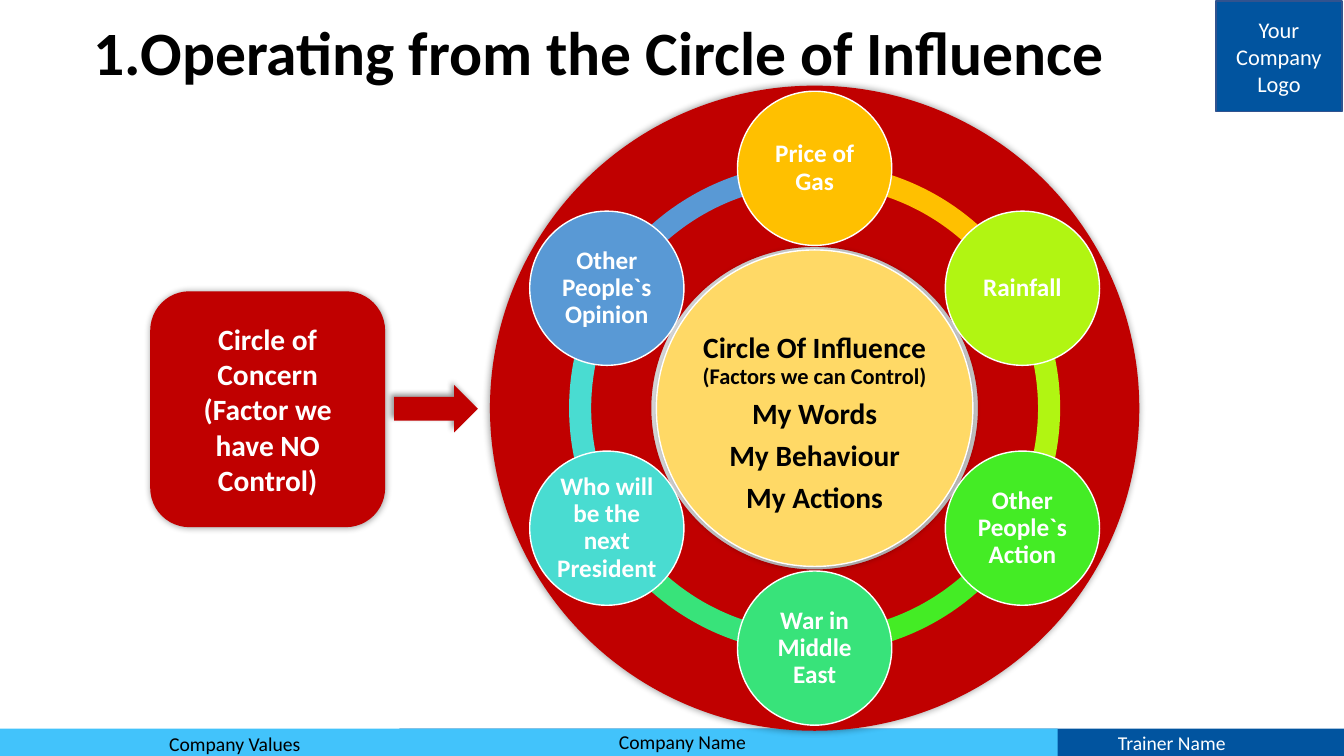
"""Build the Circle of Influence slide."""
from math import cos, radians, sin

from lxml.etree import SubElement
from pptx import Presentation
from pptx.dml.color import RGBColor
from pptx.enum.shapes import MSO_SHAPE as Kind
from pptx.enum.text import MSO_ANCHOR as Anchor, PP_ALIGN as Align
from pptx.oxml.ns import qn
from pptx.util import Pt

PX = 9144
THEME = {
    "font": "Calibri",
    "black": "000000", "white": "FFFFFF",
    "navy": "01549F", "navy_edge": "31538F", "sky": "42C3FB",
    "concern": "C00000", "influence": "FFD966",
    "ring": ["FFC000", "B1F512", "44EC25", "38E37A", "49DCD1", "5999D5"],
    "title": 44, "heading": 21, "factor": 18, "note": 16, "footer": 14,
}


def add_block(kind, box, fill, edge=None, shadow=None, adjust=()):
    """Add a preset shape; shadow is (blur, distance, direction)."""
    shape = slide.shapes.add_shape(kind, *[round(value * PX) for value in box])
    shape.shadow.inherit = False
    shape.fill.solid()
    shape.fill.fore_color.rgb = RGBColor.from_string(fill)
    if edge:
        shape.line.color.rgb = RGBColor.from_string(edge)
        shape.line.width = Pt(1)
    else:
        shape.line.fill.background()
    for index, value in enumerate(adjust):
        shape.adjustments[index] = value
    if shadow:
        blur, distance, direction = shadow
        effects = shape._element.spPr.find(qn("a:effectLst"))
        outer = SubElement(effects, qn("a:outerShdw"), blurRad=str(Pt(blur)), dist=str(Pt(distance)),
                           dir=str(direction * 60000), algn="ctr", rotWithShape="0")
        color = SubElement(outer, qn("a:srgbClr"), val=THEME["black"])
        SubElement(color, qn("a:alpha"), val="40000")
    return shape


def write_text(shape, paragraphs, color, bold=False, align=Align.CENTER, anchor=Anchor.MIDDLE,
               insets=(10, 5, 10, 5), spacing=1.0, before=0):
    """Fill a shape with paragraphs, each a list of (text, size) runs."""
    frame = shape.text_frame
    left, top, right, bottom = [value * PX for value in insets]
    layout = {"word_wrap": True, "vertical_anchor": anchor, "margin_left": left,
              "margin_top": top, "margin_right": right, "margin_bottom": bottom}
    for name, value in layout.items():
        setattr(frame, name, value)
    for index, runs in enumerate(paragraphs):
        paragraph = frame.add_paragraph() if index else frame.paragraphs[0]
        paragraph.alignment = align
        paragraph.line_spacing = spacing
        if index and before:
            paragraph.space_before = Pt(before)
        for text, size in runs:
            run = paragraph.add_run()
            run.text = text
            for name, value in {"name": THEME["font"], "size": Pt(size), "bold": bold}.items():
                setattr(run.font, name, value)
            run.font.color.rgb = RGBColor.from_string(color)


presentation = Presentation()
presentation.slide_width = 1333 * PX
presentation.slide_height = 750 * PX
slide = presentation.slides.add_slide(presentation.slide_layouts[6])

add_block(Kind.RECTANGLE, (396, 723, 938, 27), THEME["navy"])
add_block(Kind.RECTANGLE, (0, 723, 1049, 27), THEME["sky"])
logo = add_block(Kind.RECTANGLE, (1206, 1, 125, 110), THEME["navy"], THEME["navy_edge"])
write_text(logo, [[(word, THEME["note"])] for word in ("Your", "Company", "Logo")], THEME["white"])

GLOW = (5, 0, 0)
CENTER_X, CENTER_Y = 808, 405
add_block(Kind.DONUT, (486, 85, 644, 640), THEME["concern"], shadow=GLOW, adjust=[0.25])

ARC, ARC_START, ARC_STEP, FULL_TURN = 487, 162, 36, 216
for index, color in enumerate(THEME["ring"]):
    start = (ARC_START + index * ARC_STEP) % FULL_TURN
    end = (start + ARC_STEP) % FULL_TURN
    add_block(Kind.BLOCK_ARC, (CENTER_X - ARC / 2, CENTER_Y - ARC / 2, ARC, ARC), color,
              adjust=[start, end, 0.045])

CORE = 314
core = add_block(Kind.OVAL, (CENTER_X - CORE / 2, CENTER_Y - CORE / 2, CORE, CORE),
                 THEME["influence"], THEME["white"], GLOW)
core_lines = [[("Circle Of Influence ", THEME["heading"]), ("(Factors we can Control)", THEME["note"])]]
core_lines += [[(text, THEME["heading"])] for text in ("My Words", "My Behaviour", "My Actions")]
write_text(core, core_lines, THEME["black"], bold=True, insets=(0, 35, 0, 3), spacing=0.9, before=7.3)

NODE, ORBIT = 153, 238
FACTORS = ["Price of Gas", "Rainfall", "Other People`s Action", "War in Middle East",
           "Who will be the next President", "Other People`s Opinion"]
for index, (factor, color) in enumerate(zip(FACTORS, THEME["ring"])):
    angle = radians(60 * index - 90)
    left = CENTER_X + ORBIT * cos(angle) - NODE / 2
    top = CENTER_Y + ORBIT * sin(angle) - NODE / 2
    node = add_block(Kind.OVAL, (left, top, NODE, NODE), color, THEME["white"])
    write_text(node, [[(factor, THEME["factor"])]], THEME["white"], bold=True,
               insets=(2, 2, 2, 2), spacing=0.9)

LABELS = [
    ("1.Operating from the Circle of Influence", (83, 9, 1047, 71), "title", "black", True),
    ("Company Values", (158, 721, 346, 34), "footer", "black", False),
    ("Company Name", (604, 719, 242, 34), "footer", "black", False),
    ("Trainer Name", (1099, 720, 234, 34), "footer", "white", False),
]
for text, box, size, color, bold in LABELS:
    label = slide.shapes.add_textbox(*[value * PX for value in box])
    write_text(label, [[(text, THEME[size])]], THEME[color], bold, Align.LEFT, Anchor.TOP)

concern = add_block(Kind.ROUNDED_RECTANGLE, (149, 289, 233, 234), THEME["concern"],
                    shadow=GLOW, adjust=[0.167])
write_text(concern, [[(text, THEME["heading"])] for text in ("Circle of Concern", "(Factor we have NO Control)")],
           THEME["white"], bold=True)
add_block(Kind.RIGHT_ARROW, (391, 382, 83, 47), THEME["concern"], shadow=(4, 3, 225))

presentation.save("out.pptx")
